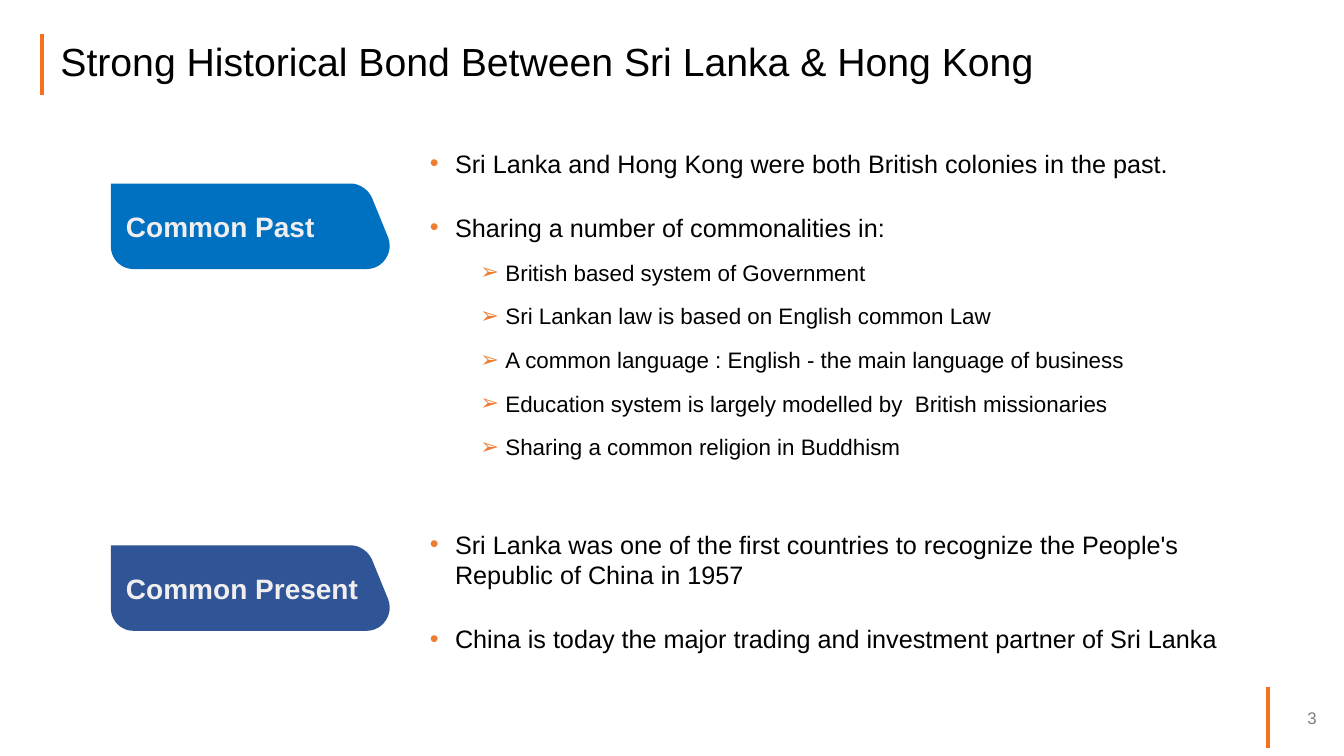
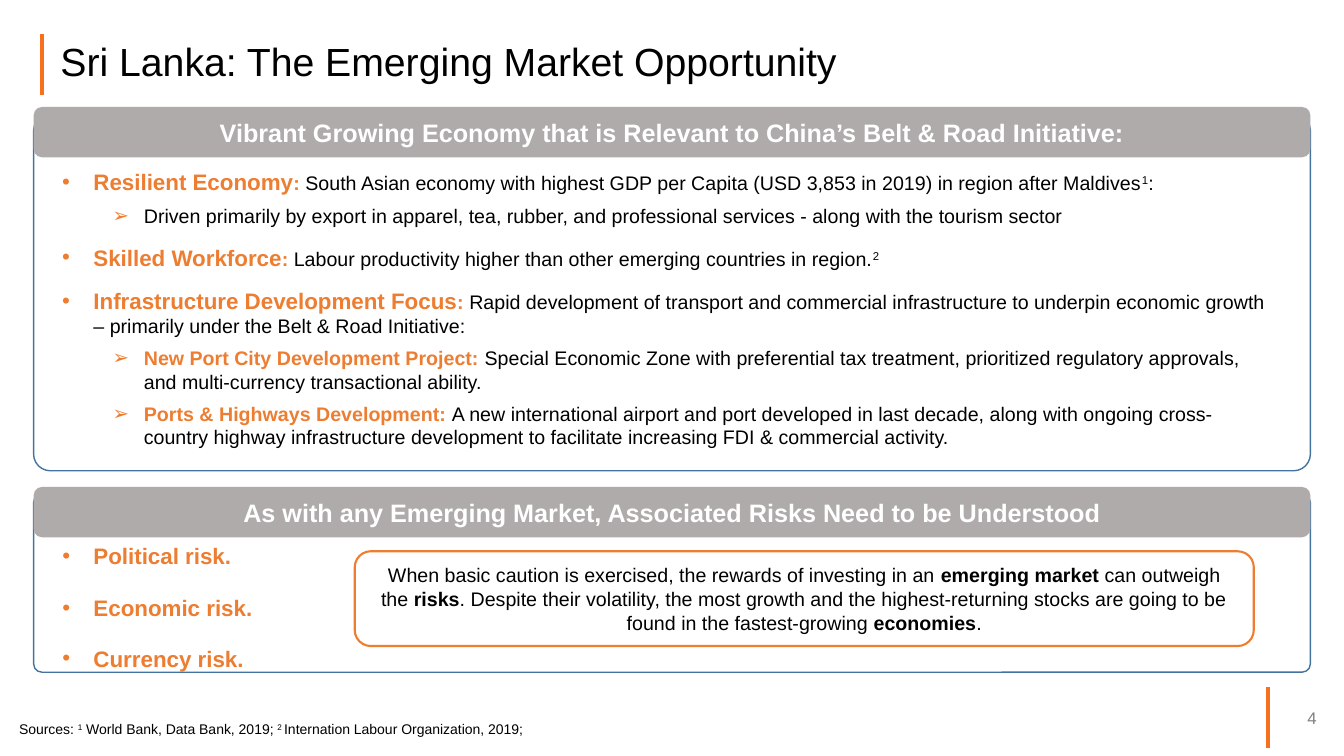
from dataclasses import dataclass
from typing import NamedTuple, Optional, Sequence

import lxml.etree
import pptx
import pptx.dml.color
import pptx.enum.shapes
import pptx.enum.text
import pptx.oxml.ns
import pptx.util

Pt = pptx.util.Pt
Align = pptx.enum.text.PP_ALIGN
Anchor = pptx.enum.text.MSO_ANCHOR
ROUNDED = pptx.enum.shapes.MSO_SHAPE.ROUNDED_RECTANGLE


@dataclass(frozen=True)
class Theme:
    font: str = "Arial"
    black: str = "000000"
    white: str = "FFFFFF"
    number_grey: str = "808080"
    header_grey: str = "AFABAB"
    rule: str = "F6701E"
    accent: str = "ED7D31"
    panel_line: str = "43739E"
    past: str = "0070C0"
    present: str = "2F5597"
    tag_text: str = "F1EEEF"
    title_size: float = 28
    tag_size: float = 20
    heading_size: float = 18
    lead_size: float = 16
    body_size: float = 14
    number_size: float = 12
    source_size: float = 10


THEME = Theme()


class Box(NamedTuple):
    left: float
    top: float
    width: float
    height: float

    def lengths(self) -> list:
        return [Pt(value) for value in self]


class Span(NamedTuple):
    text: str
    size: float = THEME.body_size
    color: str = THEME.black
    bold: bool = False
    raised: bool = False


class Bullet(NamedTuple):
    symbol: str
    margin: float
    hanging: float


class Item(NamedTuple):
    spans: Sequence[Span]
    bullet: Optional[Bullet] = None
    before: float = 0
    after: float = 0
    align: Align = Align.LEFT


class Tag(NamedTuple):
    text: str
    top: float
    color: str


class Panel(NamedTuple):
    heading: str
    top: float
    height: float


POINT = Bullet("•", 18, 18)
DETAIL = Bullet("➢", 54, 18)
PANEL_POINT = Bullet("•", 58.3, 22.3)
PANEL_DETAIL = Bullet("➢", 94.3, 22.3)


def rgb(color: str) -> pptx.dml.color.RGBColor:
    return pptx.dml.color.RGBColor.from_string(color)


def add_child(parent, tag: str, **attributes: str):
    return lxml.etree.SubElement(parent, pptx.oxml.ns.qn(tag), **attributes)


def set_bullet(paragraph, bullet: Bullet) -> None:
    properties = paragraph._p.get_or_add_pPr()
    properties.set("marL", str(int(Pt(bullet.margin))))
    properties.set("indent", str(-int(Pt(bullet.hanging))))
    add_child(add_child(properties, "a:buClr"), "a:srgbClr", val=THEME.accent)
    add_child(properties, "a:buFont", typeface=THEME.font)
    add_child(properties, "a:buChar", char=bullet.symbol)


def add_span(paragraph, span: Span) -> None:
    run = paragraph.add_run()
    run.text = span.text
    run.font.name = THEME.font
    run.font.size = Pt(span.size)
    run.font.bold = span.bold
    run.font.color.rgb = rgb(span.color)
    if span.raised:
        run._r.get_or_add_rPr().set("baseline", "30000")


def write(shape, items: Sequence[Item], anchor: Anchor = Anchor.TOP, wrap: bool = True) -> None:
    """Fill an empty shape; the first paragraph gets no space before."""
    frame = shape.text_frame
    frame.word_wrap = wrap
    frame.vertical_anchor = anchor
    for index, item in enumerate(items):
        paragraph = frame.add_paragraph() if index else frame.paragraphs[0]
        paragraph.alignment = item.align
        paragraph.space_before = Pt(item.before if index else 0)
        paragraph.space_after = Pt(item.after)
        if item.bullet:
            set_bullet(paragraph, item.bullet)
        for span in item.spans:
            add_span(paragraph, span)


def add_text(slide, box: Box, items: Sequence[Item], anchor: Anchor = Anchor.TOP,
             wrap: bool = True) -> None:
    write(slide.shapes.add_textbox(*box.lengths()), items, anchor, wrap)


def add_rule(slide, x: float, top: float) -> None:
    connector = slide.shapes.add_connector(
        pptx.enum.shapes.MSO_CONNECTOR.STRAIGHT, Pt(x), Pt(top), Pt(x), Pt(top + 43.2))
    connector.line.color.rgb = rgb(THEME.rule)
    connector.line.width = Pt(3)
    add_child(connector._element.spPr, "a:effectLst")


def paint(shape, fill: Optional[str] = None, line: Optional[str] = None, width: float = 1) -> None:
    shape.shadow.inherit = False
    if fill:
        shape.fill.solid()
        shape.fill.fore_color.rgb = rgb(fill)
    else:
        shape.fill.background()
    if line:
        shape.line.color.rgb = rgb(line)
        shape.line.width = Pt(width)
    else:
        shape.line.fill.background()


def add_rounded(slide, box: Box, rounding: float = 0.17, **style):
    shape = slide.shapes.add_shape(ROUNDED, *box.lengths())
    shape.adjustments[0] = rounding
    paint(shape, **style)
    return shape


def curve(start: tuple, first: tuple, second: tuple, end: tuple, steps: int = 12) -> list:
    """Points along a cubic curve, without its start."""
    points = []
    for step in range(1, steps + 1):
        t = step / steps
        weights = ((1 - t) ** 3, 3 * t * (1 - t) ** 2, 3 * t * t * (1 - t), t ** 3)
        points.append(tuple(
            sum(weight * point[axis] for weight, point in zip(weights, (start, first, second, end)))
            for axis in (0, 1)))
    return points


def add_tag(slide, tag: Tag) -> None:
    left = 79.2
    outline = [
        (171.4, 0),
        *curve((171.4, 0), (177.8, 0), (183.6, 4.1), (186.5, 10)),
        (198, 38.2),
        *curve((198, 38.2), (202.3, 49), (194.4, 61), (182.9, 61)),
        (16, 61),
        *curve((16, 61), (7.2, 61), (0, 53.8), (0, 44.6)),
    ]
    builder = slide.shapes.build_freeform(Pt(left), Pt(tag.top))
    builder.add_line_segments([(Pt(left + x), Pt(tag.top + y)) for x, y in outline], close=True)
    shape = builder.convert_to_shape()
    paint(shape, fill=tag.color)
    frame = shape.text_frame
    frame.margin_left = Pt(10.8)
    frame.margin_top = frame.margin_right = frame.margin_bottom = Pt(2.2)
    write(shape, [Item([Span(tag.text, THEME.tag_size, THEME.tag_text, True)])], Anchor.MIDDLE)


def add_panel(slide, panel: Panel) -> None:
    """Outlined panel whose header overlaps its top edge."""
    left, width = 24, 912
    add_rounded(slide, Box(left, panel.top, width, panel.height), 0.047, line=THEME.panel_line)
    header = add_rounded(slide, Box(left, panel.top - 5, width, 36), fill=THEME.header_grey)
    heading = Span(panel.heading, THEME.heading_size, THEME.white, True)
    write(header, [Item([heading], align=Align.CENTER)], Anchor.MIDDLE)


def add_titled_slide(presentation, title: str, number: int):
    slide = presentation.slides.add_slide(presentation.slide_layouts[5])
    add_rule(slide, 30.2, 24.5)
    add_rule(slide, 905.8, 491)
    shape = slide.shapes.title
    shape.left, shape.top, shape.width, shape.height = Box(36, 26, 828, 39).lengths()
    write(shape, [Item([Span(title, THEME.title_size)])], Anchor.MIDDLE)
    shape.text_frame.auto_size = pptx.enum.text.MSO_AUTO_SIZE.NONE
    shape.text_frame.paragraphs[0].line_spacing = 0.9
    number_span = Span(str(number), THEME.number_size, THEME.number_grey)
    add_text(slide, Box(905.8, 498.2, 41.8, 28.8),
             [Item([number_span], align=Align.RIGHT)], Anchor.MIDDLE)
    return slide


def point(text: str) -> Item:
    return Item([Span(text, THEME.heading_size)], POINT, before=24)


def detail(text: str) -> Item:
    return Item([Span(text, THEME.lead_size)], DETAIL, before=12)


def accent(text: str, size: float = THEME.body_size) -> Span:
    return Span(text, size, THEME.accent, True)


def panel_point(lead: str, *spans: Span) -> Item:
    return Item([accent(lead, THEME.lead_size), accent(": "), *spans], PANEL_POINT, before=12)


def panel_detail(*spans: Span) -> Item:
    return Item(spans, PANEL_DETAIL, before=6)


def build_bond_slide(presentation) -> None:
    slide = add_titled_slide(presentation, "Strong Historical Bond Between Sri Lanka & Hong Kong", 3)
    add_tag(slide, Tag("Common Past", 131.2, THEME.past))
    add_text(slide, Box(300, 102.2, 582, 252), [
        point("Sri Lanka and Hong Kong were both British colonies in the past."),
        point("Sharing a number of commonalities in:"),
        detail("British based system of Government"),
        detail("Sri Lankan law is based on English common Law"),
        detail("A common language : English - the main language of business"),
        detail("Education system is largely modelled by  British missionaries"),
        detail("Sharing a common religion in Buddhism"),
    ])
    add_tag(slide, Tag("Common Present", 389.6, THEME.present))
    add_text(slide, Box(300, 374.4, 593.3, 97.2), [
        point("Sri Lanka was one of the first countries to recognize the People's "
              "Republic of China in 1957"),
        point("China is today the major trading and investment partner of Sri Lanka"),
    ])


def build_market_slide(presentation) -> None:
    slide = add_titled_slide(presentation, "Sri Lanka: The Emerging Market Opportunity", 4)
    size = THEME.source_size
    add_text(slide, Box(6.5, 511.2, 383, 19.4), [Item([
        Span("Sources: ", size), Span("1", size, raised=True),
        Span(" World Bank, Data Bank, 2019; ", size), Span("2 ", size, raised=True),
        Span("Internation Labour Organization, 2019;", size),
    ])], wrap=False)

    add_panel(slide, Panel(
        "Vibrant Growing Economy that is Relevant to China’s Belt & Road Initiative:", 81.4, 254.9))
    add_text(slide, Box(1.4, 116.6, 911.5, 209.5), [
        panel_point("Resilient Economy",
                    Span("South Asian economy with highest GDP per Capita (USD 3,853 in 2019) "
                         "in region after Maldives"), Span("1", raised=True), Span(":")),
        panel_detail(Span("Driven primarily by export in apparel, tea, rubber, and professional "
                          "services - along with the tourism sector")),
        panel_point("Skilled Workforce",
                    Span("Labour productivity higher than other emerging countries in region."),
                    Span("2", raised=True)),
        panel_point("Infrastructure Development Focus",
                    Span("Rapid development of transport and commercial infrastructure to underpin "
                         "economic growth – primarily under the Belt & Road Initiative:")),
        panel_detail(accent("New Port City Development Project: "),
                     Span("Special Economic Zone with preferential tax treatment, prioritized "
                          "regulatory approvals, and multi-currency transactional ability.")),
        panel_detail(accent("Ports & Highways Development: "),
                     Span("A new international airport and port developed in last decade, along "
                          "with ongoing cross-country highway infrastructure development to "
                          "facilitate increasing FDI & commercial activity.")),
    ])

    add_panel(slide, Panel(
        "As with any Emerging Market, Associated Risks Need to be Understood", 352.8, 127.4))
    risks = (("Political risk.", 6), ("Economic risk.", 4.8), ("Currency risk.", 12))
    add_text(slide, Box(1.4, 383.8, 858.2, 100.8), [
        Item([accent(risk, THEME.lead_size)], PANEL_POINT, 12, after) for risk, after in risks])
    callout = add_rounded(slide, Box(253.4, 393.8, 642.2, 67.7), line=THEME.accent, width=1.5)
    callout.text_frame.margin_left = callout.text_frame.margin_right = Pt(10)
    write(callout, [Item([
        Span("When basic caution is exercised, the rewards of investing in an "),
        Span("emerging market", bold=True), Span(" can outweigh the "), Span("risks", bold=True),
        Span(". Despite their volatility, the most growth and the highest-returning stocks "
             "are going to be found in the fastest-growing "),
        Span("economies", bold=True), Span("."),
    ], align=Align.CENTER)], Anchor.MIDDLE)


def main() -> None:
    presentation = pptx.Presentation()
    presentation.slide_width, presentation.slide_height = Pt(960), Pt(540)
    build_bond_slide(presentation)
    build_market_slide(presentation)
    presentation.save("out.pptx")


if __name__ == "__main__":
    main()
